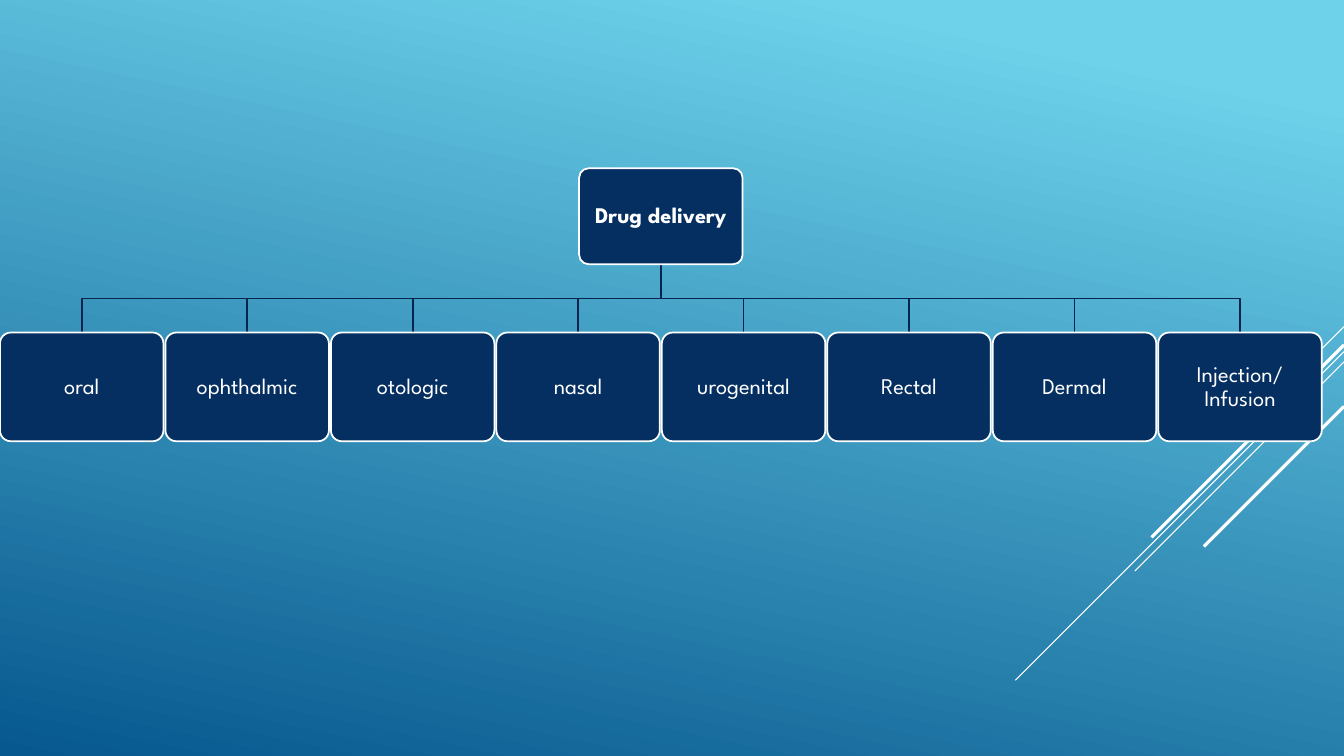
import pptx
import pptx.util
from lxml import etree
from pptx.dml.color import RGBColor
from pptx.enum.shapes import MSO_CONNECTOR, MSO_SHAPE
from pptx.enum.text import MSO_ANCHOR, PP_ALIGN
from pptx.oxml.ns import qn
from pptx.util import Cm

WHITE = RGBColor(0xFF, 0xFF, 0xFF)
NAVY = RGBColor(0x05, 0x2F, 0x61)
LINK_NAVY = RGBColor(0x04, 0x26, 0x4E)
SKY = RGBColor(0x6E, 0xD2, 0xEB)
OCEAN = RGBColor(0x06, 0x58, 0x8E)

SLIDE_WIDTH, SLIDE_HEIGHT = 33.87, 19.05
BOX_WIDTH, BOX_PITCH = 4.12, 4.17
ROOT_TOP, ROOT_HEIGHT = 4.24, 2.42
ROUTE_TOP, ROUTE_HEIGHT = 8.38, 2.74
ROUTES = ["oral", "ophthalmic", "otologic", "nasal",
          "urogenital", "Rectal", "Dermal", "Injection/ Infusion"]
STREAKS = [(8.23, 2.54, 0.75), (8.86, 8.28, 0.75), (9.12, 5.27, 0.75),
           (8.69, 4.85, 2.25), (10.24, 3.53, 2.25)]


class Chart:
    font = "League Spartan"
    size = pptx.util.Pt(16)
    outline = pptx.util.Pt(1.25)

    def __init__(self, page):
        self.page = page

    def background(self):
        fill = self.page.background.fill
        fill.gradient()
        fill.gradient_angle = 258
        for stop, position, color in zip(fill.gradient_stops, (0.1, 1), (SKY, OCEAN)):
            stop.position = position
            stop.color.rgb = color

    def streak(self, top, length, width):
        line = self.page.shapes.add_connector(
            MSO_CONNECTOR.STRAIGHT, Cm(SLIDE_WIDTH), Cm(top),
            Cm(SLIDE_WIDTH - length), Cm(top + length))
        line.line.color.rgb = WHITE
        line.line.width = pptx.util.Pt(width)
        etree.SubElement(line._element.spPr, qn("a:effectLst"))

    def box(self, text, left, top, height, bold=False):
        box = self.page.shapes.add_shape(
            MSO_SHAPE.ROUNDED_RECTANGLE, Cm(left), Cm(top), Cm(BOX_WIDTH), Cm(height))
        box.adjustments[0] = 0.1
        box.shadow.inherit = False
        box.fill.solid()
        box.fill.fore_color.rgb = NAVY
        box.line.color.rgb = WHITE
        box.line.width = self.outline
        frame = box.text_frame
        frame.word_wrap = True
        frame.vertical_anchor = MSO_ANCHOR.MIDDLE
        frame.margin_left = frame.margin_right = Cm(0.27)
        frame.margin_top = frame.margin_bottom = Cm(0.27)
        para = frame.paragraphs[0]
        para.text = text
        para.alignment = PP_ALIGN.CENTER
        para.line_spacing = 0.9
        para.font.name = self.font
        para.font.size = self.size
        para.font.bold = bold
        para.font.color.rgb = WHITE

    def link(self, start_x, start_y, end_x, end_y):
        middle = (start_y + end_y) / 2
        builder = self.page.shapes.build_freeform(Cm(start_x), Cm(start_y))
        corners = [(start_x, middle), (end_x, middle), (end_x, end_y)]
        builder.add_line_segments([(Cm(x), Cm(y)) for x, y in corners], close=False)
        link = builder.convert_to_shape()
        link.shadow.inherit = False
        link.fill.background()
        link.line.color.rgb = LINK_NAVY
        link.line.width = self.outline


def main():
    deck = pptx.Presentation()
    deck.slide_width, deck.slide_height = Cm(SLIDE_WIDTH), Cm(SLIDE_HEIGHT)
    chart = Chart(deck.slides.add_slide(deck.slide_layouts[6]))
    chart.background()
    for top, length, width in STREAKS:
        chart.streak(top, length, width)

    lefts = [index * BOX_PITCH for index in range(len(ROUTES))]
    root_left = lefts[-1] / 2
    half = BOX_WIDTH / 2
    for left in lefts:
        chart.link(root_left + half, ROOT_TOP + ROOT_HEIGHT, left + half, ROUTE_TOP)
    chart.box("Drug delivery", root_left, ROOT_TOP, ROOT_HEIGHT, bold=True)
    for route, left in zip(ROUTES, lefts):
        chart.box(route, left, ROUTE_TOP, ROUTE_HEIGHT)
    deck.save("out.pptx")


if __name__ == "__main__":
    main()
